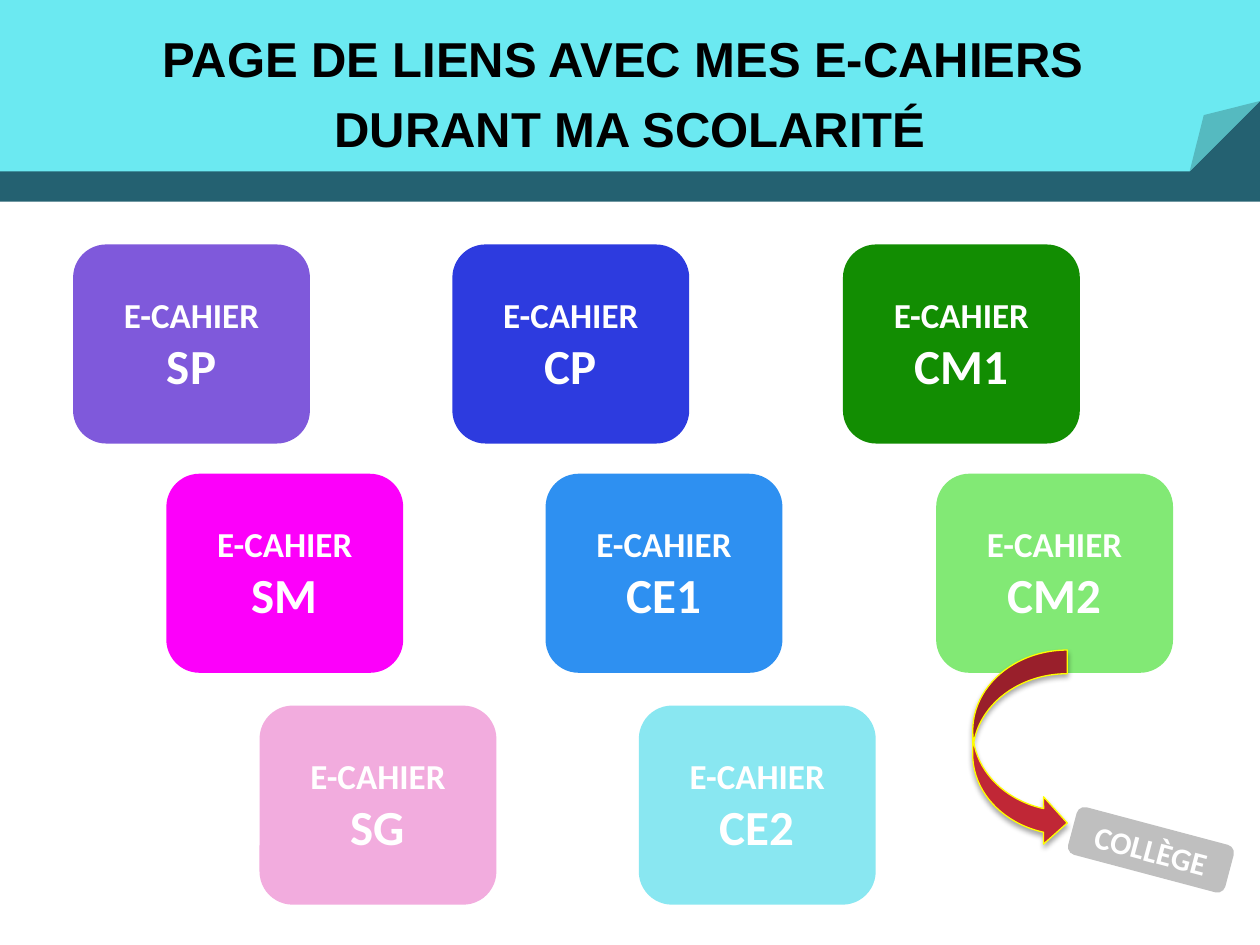
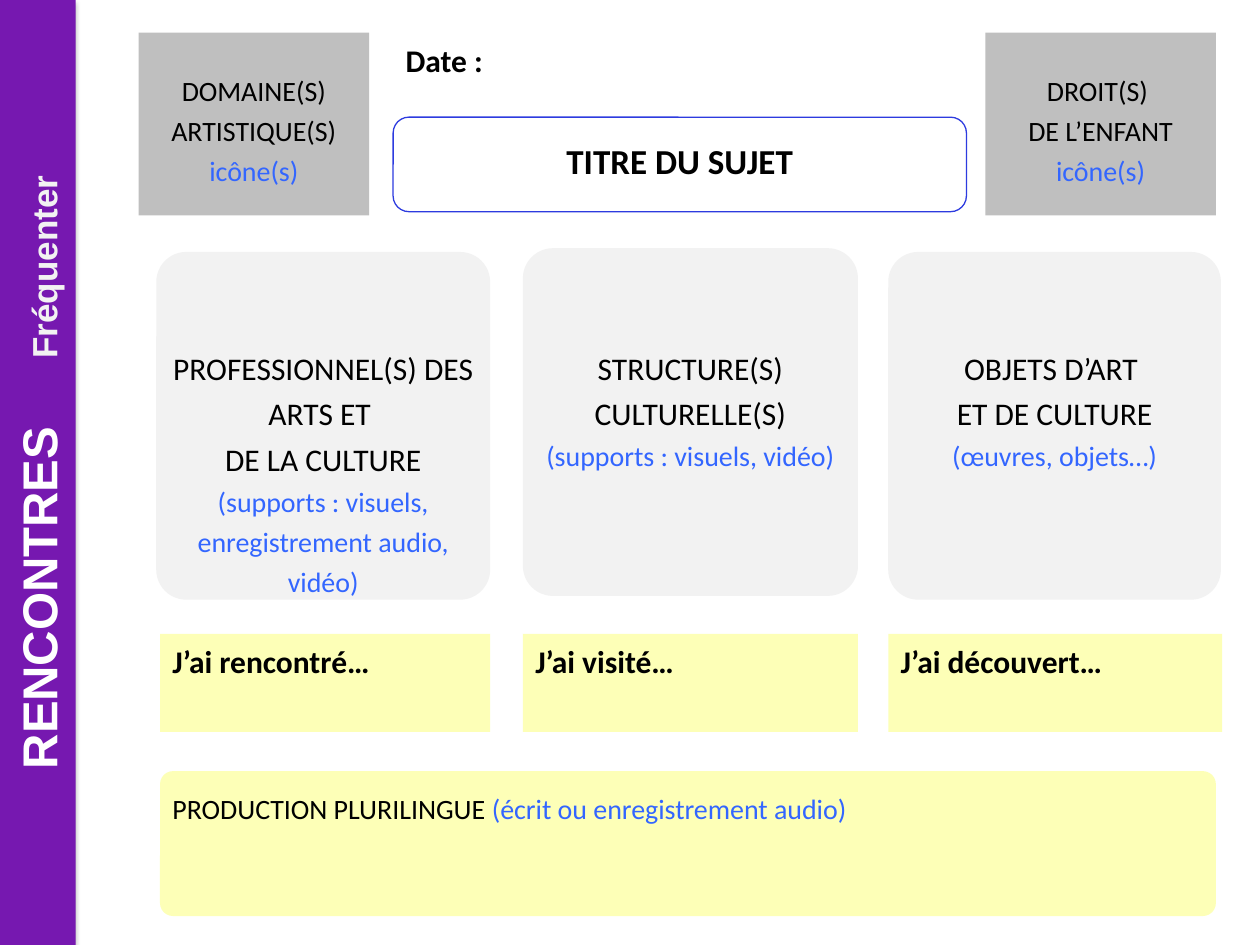
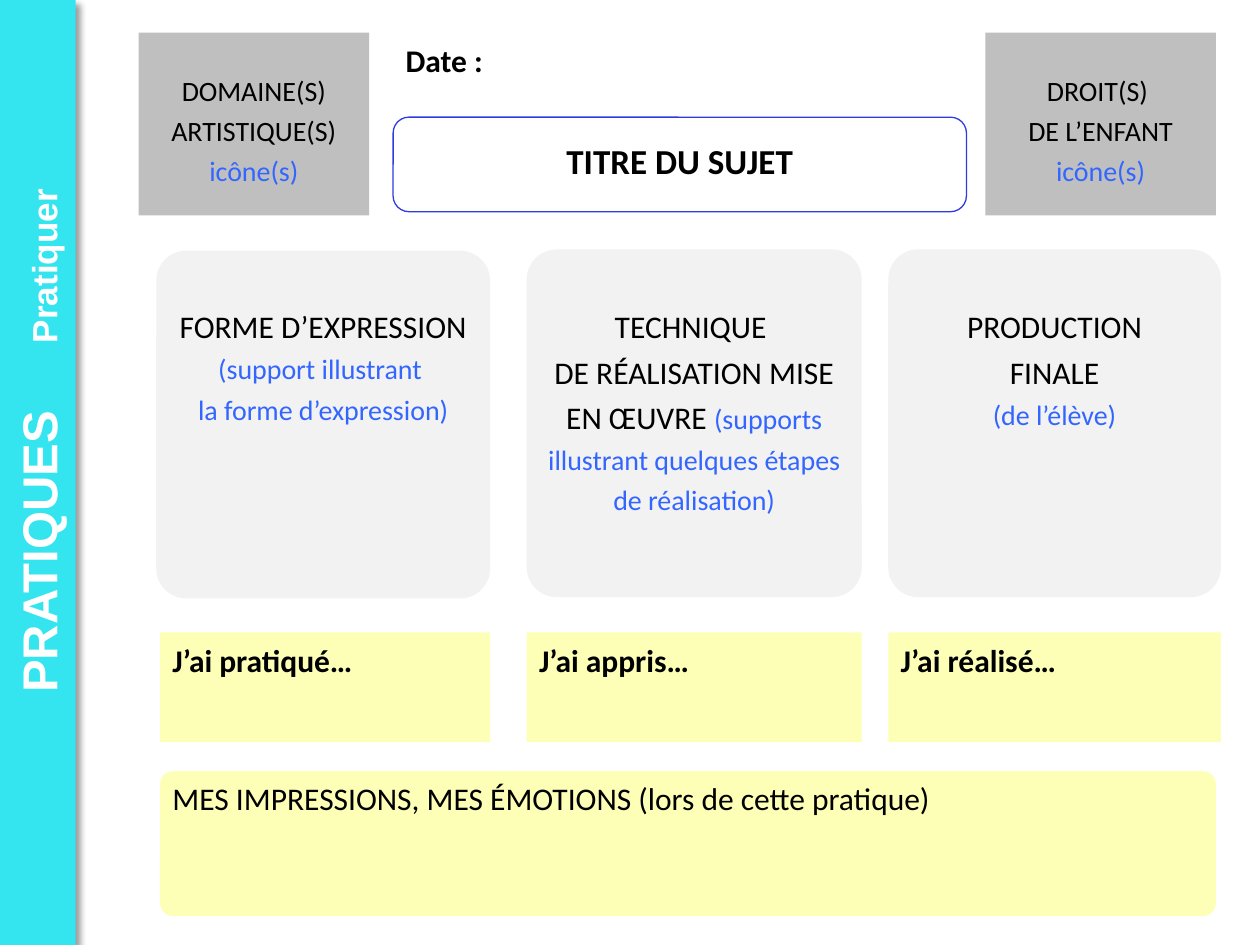
from dataclasses import dataclass
from typing import NamedTuple, Optional

from lxml.etree import SubElement
from pptx import Presentation
from pptx.dml.color import RGBColor
from pptx.enum.shapes import MSO_SHAPE as Shape
from pptx.enum.text import MSO_ANCHOR as Anchor, MSO_AUTO_SIZE as Fit, PP_ALIGN as Align
from pptx.oxml.ns import qn
from pptx.util import Pt

PX = 9144
WIDTH, HEIGHT = 1000, 750
BLACK, WHITE, BLUE = "000000", "FFFFFF", "3366FF"
TILE_GREY, CARD_GREY, YELLOW = "BFBFBF", "F2F2F2", "FDFFA0"
FRAME_BLUE, BAND, BAND_EDGE = "2D3BDF", "6BE9F1", "246171"
CARD_ROUNDING = 0.09


class Box(NamedTuple):
    x: int
    y: int
    w: int
    h: int


class Run(NamedTuple):
    text: str
    size: int
    color: str = BLACK
    gap: float = 0


class Shadow(NamedTuple):
    opacity: int
    blur: float
    distance: float
    angle: int


class Notebook(NamedTuple):
    column: int
    row: int
    name: str
    color: str
    opacity: int = 100


@dataclass
class Column:
    x: int
    w: int
    card_y: int
    lines: list
    prompt: str
    prompt_x: int
    prompt_w: int


@dataclass
class Page:
    bar_color: str
    bar_shadow: Shadow
    theme: str
    verb: Run
    text_y: int
    prompt_y: int
    prompt_h: int
    columns: list
    footer: list
    footer_spacing: float


SOFT = Shadow(35, 3.1, 1.8, 90)
DEEP = Shadow(40, 4, 3, 45)

COLUMN_X = (58, 359, 669)
ROW_Y = (194, 376, 560)
ROW_SHIFT = 74
NOTEBOOKS = [
    Notebook(0, 0, "SP", "7F59DB"),
    Notebook(0, 1, "SM", "FC00FA"),
    Notebook(0, 2, "SG", "F2ACDE"),
    Notebook(1, 0, "CP", "2D3BDF"),
    Notebook(1, 1, "CE1", "2E90F1"),
    Notebook(1, 2, "CE2", "89E7F1"),
    Notebook(2, 0, "CM1", "128D02"),
    Notebook(2, 1, "CM2", "1CD805", 55),
]


def head(text: str) -> list:
    return [Run(text, 18)]


def hint(text: str) -> list:
    return [Run(text, 16, BLUE)]


def label(text: str) -> list:
    return [Run(text, 16)]


TILES = [
    (110, [label("DOMAINE(S) ARTISTIQUE(S)"), hint("icône(s)")]),
    (782, [label("DROIT(S) "), label("DE L’ENFANT"), hint("icône(s)")]),
]

PAGES = [
    Page("7618B0", SOFT, "RENCONTRES", Run("Fréquenter", 20, CARD_GREY), 266, 503, 78, [
        Column(124, 265, 200,
               [head("PROFESSIONNEL(S) DES ARTS ET "), head("DE LA CULTURE"),
                hint("(supports : visuels, enregistrement audio, vidéo)")],
               "J’ai rencontré…", 127, 262),
        Column(415, 266, 197,
               [head("STRUCTURE(S) CULTURELLE(S)"), hint("(supports : visuels, vidéo)")],
               "J’ai visité…", 415, 266),
        Column(705, 264, 200,
               [head("OBJETS D’ART "), head("ET DE CULTURE"), hint("(œuvres, objets…)")],
               "J’ai découvert…", 705, 265),
    ], label("PRODUCTION PLURILINGUE ") + hint("(écrit ou enregistrement audio)"), 1.4),
    Page("34E5F0", DEEP, "\tPRATIQUES", Run("Pratiquer", 20, WHITE), 233, 502, 87, [
        Column(124, 265, 199,
               [head("FORME D’EXPRESSION"), hint("(support illustrant "),
                hint("la forme d’expression)")],
               "J’ai pratiqué…", 127, 262),
        Column(418, 266, 198,
               [head("TECHNIQUE "),
                head("DE RÉALISATION MISE EN ŒUVRE ")
                + hint("(supports illustrant quelques étapes de réalisation)")],
               "J’ai appris…", 418, 266),
        Column(705, 264, 198,
               [head("PRODUCTION"), head("FINALE"), hint("(de l’élève)")],
               "J’ai réalisé…", 705, 264),
    ], head("MES IMPRESSIONS, MES ÉMOTIONS (lors de cette pratique)"), 1),
]


def rgb(color: str) -> RGBColor:
    return RGBColor.from_string(color)


def scaled(box: Box) -> list:
    return [v * PX for v in box]


def write(tf, lines: list, font: str = "Calibri", bold: bool = False,
          align: Align = Align.CENTER, spacing: float = 1) -> None:
    tf.word_wrap = True
    for i, runs in enumerate(lines):
        p = tf.add_paragraph() if i else tf.paragraphs[0]
        p.alignment, p.line_spacing = align, spacing
        p.font.name, p.font.bold = font, bold
        same_size = len({run.size for run in runs}) == 1
        same_color = len({run.color for run in runs}) == 1
        if same_size:
            p.font.size = Pt(runs[0].size)
        if same_color:
            p.font.color.rgb = rgb(runs[0].color)
        for run in runs:
            r = p.add_run()
            r.text = run.text
            if not same_size:
                r.font.size = Pt(run.size)
            if not same_color:
                r.font.color.rgb = rgb(run.color)
            if run.gap:
                r.font._element.set("spc", str(round(run.gap * 100)))


def add_shadow(sp, shadow: Shadow) -> None:
    effects = sp.element.spPr.find(qn("a:effectLst"))
    outer = SubElement(effects, qn("a:outerShdw"), blurRad=str(Pt(shadow.blur)),
                       dist=str(Pt(shadow.distance)), dir=str(shadow.angle * 60000),
                       rotWithShape="0")
    color = SubElement(outer, qn("a:srgbClr"), val=BLACK)
    SubElement(color, qn("a:alpha"), val=str(shadow.opacity * 1000))


def add_box(s, kind: Shape, box: Box, fill: Optional[str], opacity: int = 100,
            line: Optional[str] = None, rounding: Optional[float] = None,
            shadow: Optional[Shadow] = None):
    sp = s.shapes.add_shape(kind, *scaled(box))
    sp.shadow.inherit = False
    if fill:
        sp.fill.solid()
        sp.fill.fore_color.rgb = rgb(fill)
        if opacity < 100:
            color = sp.element.spPr.find(qn("a:solidFill"))[0]
            SubElement(color, qn("a:alpha"), val=str(opacity * 1000))
    else:
        sp.fill.background()
    if line:
        sp.line.color.rgb = rgb(line)
        sp.line.width = Pt(0.75)
    else:
        sp.line.fill.background()
    if rounding is not None:
        sp.adjustments[0] = rounding
    if shadow:
        add_shadow(sp, shadow)
    sp.text_frame.vertical_anchor = Anchor.MIDDLE
    return sp


def fold_corner(sp, fold: float) -> None:
    guides = sp.element.spPr.find(qn("a:prstGeom")).find(qn("a:avLst"))
    SubElement(guides, qn("a:gd"), name="adj", fmla=f"val {round(fold * 100000)}")


def add_text(s, box: Box, lines: list, **style) -> None:
    tf = s.shapes.add_textbox(*scaled(box)).text_frame
    write(tf, lines, **style)
    tf.auto_size = Fit.SHAPE_TO_FIT_TEXT


def place_title(s, box: Box, lines: list, **style) -> None:
    title = s.shapes.title
    title.left, title.top, title.width, title.height = scaled(box)
    tf = title.text_frame
    tf.auto_size = Fit.NONE
    tf.vertical_anchor = Anchor.MIDDLE
    write(tf, lines, bold=True, **style)
    title.element.getparent().append(title.element)


def build_links(s) -> None:
    for nb in NOTEBOOKS:
        box = Box(COLUMN_X[nb.column] + nb.row * ROW_SHIFT, ROW_Y[nb.row], 188, 158)
        sp = add_box(s, Shape.ROUNDED_RECTANGLE, box, nb.color, nb.opacity)
        write(sp.text_frame, [[Run("E-CAHIER", 20, WHITE)], [Run(nb.name, 28, WHITE)]],
              bold=True)
    add_box(s, Shape.CURVED_RIGHT_ARROW, Box(772, 516, 75, 156), "C02736",
            line="FFFF00", shadow=SOFT)
    add_box(s, Shape.RECTANGLE, Box(0, 0, WIDTH, 160), BAND_EDGE)
    band = add_box(s, Shape.FOLDED_CORNER, Box(0, 0, WIDTH, 136), BAND)
    fold_corner(band, 0.41)
    place_title(s, Box(0, 9, WIDTH, 120),
                [[Run("PAGE DE LIENS AVEC MES E-CAHIERS ", 28)],
                 [Run("DURANT MA SCOLARITÉ", 28)]], font="Arial", spacing=1.2)
    college = add_box(s, Shape.ROUNDED_RECTANGLE, Box(849, 655, 129, 39), TILE_GREY)
    college.rotation = 14.9
    write(college.text_frame, [[Run("COLLÈGE", 18, WHITE)]], bold=True)


def build_header(s) -> None:
    for x, lines in TILES:
        add_box(s, Shape.RECTANGLE, Box(x, 26, 183, 145), TILE_GREY)
        add_text(s, Box(x, 48, 183, 106), lines, spacing=1.2)
    add_box(s, Shape.ROUNDED_RECTANGLE, Box(312, 93, 455, 75), None, line=FRAME_BLUE)
    place_title(s, Box(312, 105, 455, 44), [[Run("TITRE DU SUJET", 20)]])
    add_text(s, Box(312, 28, 455, 40), [head("Date :")], bold=True, align=Align.LEFT)


def build_page(s, page: Page) -> None:
    for col in page.columns:
        add_box(s, Shape.ROUNDED_RECTANGLE, Box(col.x, col.card_y, col.w, 276),
                CARD_GREY, rounding=CARD_ROUNDING)
        add_text(s, Box(col.x, page.text_y, col.w, 215), col.lines, spacing=1.2)
        add_box(s, Shape.RECTANGLE,
                Box(col.prompt_x, page.prompt_y, col.prompt_w, page.prompt_h), YELLOW, 75)
        add_text(s, Box(col.prompt_x, page.prompt_y + 2, col.prompt_w, 40),
                 [head(col.prompt)], bold=True, align=Align.LEFT)
    footer = Box(127, 612, 838, 115)
    add_box(s, Shape.ROUNDED_RECTANGLE, footer, YELLOW, 75, rounding=CARD_ROUNDING)
    add_text(s, footer._replace(y=613, h=40), [page.footer], align=Align.LEFT,
             spacing=page.footer_spacing)
    build_header(s)
    bar = add_box(s, Shape.RECTANGLE, Box(0, 0, 60, HEIGHT), page.bar_color,
                  shadow=page.bar_shadow)
    write(bar.text_frame, [[Run(page.theme, 28, WHITE), Run(" ", 28, WHITE, gap=31),
                            page.verb]], font="Arial", bold=True)
    bar.text_frame._txBody.bodyPr.set("vert", "vert270")


def main() -> None:
    prs = Presentation()
    prs.slide_width, prs.slide_height = WIDTH * PX, HEIGHT * PX
    layout = prs.slide_layouts[5]
    build_links(prs.slides.add_slide(layout))
    for page in PAGES:
        build_page(prs.slides.add_slide(layout), page)
    prs.save("out.pptx")


if __name__ == "__main__":
    main()
